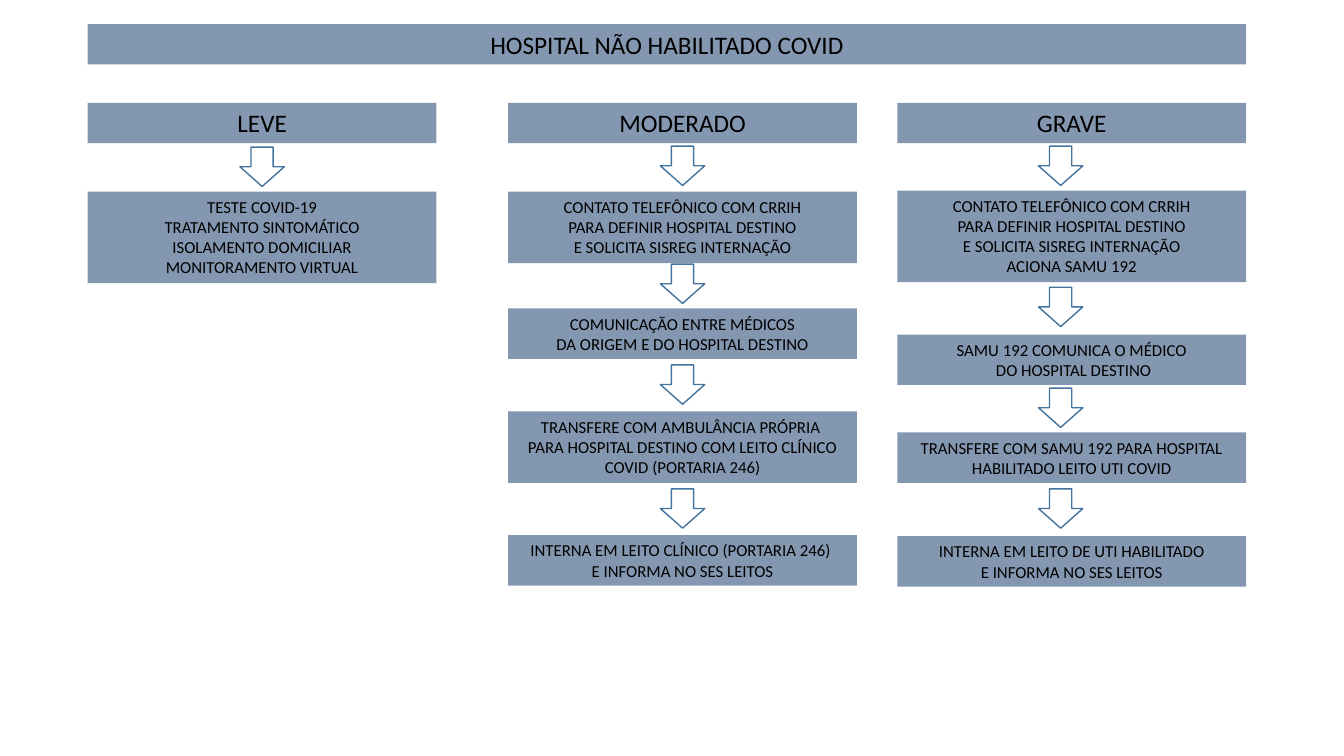
from pptx import Presentation
from pptx import util as u
from pptx.dml.color import RGBColor
from pptx.enum import shapes, text

BOX_FILL = RGBColor(0x84, 0x97, 0xB0)
ARROW_LINE = RGBColor(0x43, 0x73, 0x9E)
BLACK = RGBColor(0, 0, 0)

TITLE_HEIGHT = 0.4
BOX_HEIGHTS = {2: 0.5, 3: 0.71, 4: 0.91}  # by number of visible lines
COLUMN_WIDTH = 3.46
ARROW_WIDTH, ARROW_HEIGHT = 0.44, 0.39


def write_text(frame, content, size=12, font="Calibri", color=BLACK):
    """Write one centred paragraph per line of content."""
    for index, line in enumerate(content.split("\n")):
        paragraph = frame.paragraphs[0] if index == 0 else frame.add_paragraph()
        paragraph.alignment = text.PP_ALIGN.CENTER
        run = paragraph.add_run()
        run.text = line
        run.font.size = u.Pt(size)
        run.font.name = font
        run.font.color.rgb = color


class Flowchart:
    def __init__(self, slide):
        self.slide = slide

    def add_shape(self, kind, left, top, width, height):
        shape = self.slide.shapes.add_shape(
            kind, u.Inches(left), u.Inches(top), u.Inches(width), u.Inches(height))
        shape.shadow.inherit = False
        return shape

    def box(self, content, left, top, width, height, size=12):
        shape = self.add_shape(shapes.MSO_SHAPE.RECTANGLE, left, top, width, height)
        shape.fill.solid()
        shape.fill.fore_color.rgb = BOX_FILL
        shape.line.fill.background()
        frame = shape.text_frame
        frame.word_wrap = True
        frame.auto_size = text.MSO_AUTO_SIZE.SHAPE_TO_FIT_TEXT
        frame.vertical_anchor = text.MSO_ANCHOR.TOP
        write_text(frame, content, size=size)

    def arrow(self, left, top):
        shape = self.add_shape(
            shapes.MSO_SHAPE.DOWN_ARROW, left, top, ARROW_WIDTH, ARROW_HEIGHT)
        shape.fill.background()
        shape.line.color.rgb = ARROW_LINE
        shape.line.width = u.Pt(1)

    def column(self, heading, left, arrow_left, steps):
        self.box(heading, left, 1.02, COLUMN_WIDTH, TITLE_HEIGHT, size=18)
        for arrow_top, top, line_count, content in steps:
            self.arrow(arrow_left, arrow_top)
            self.box(content, left, top, COLUMN_WIDTH, BOX_HEIGHTS[line_count])


# Each step: top of its arrow, top of its box, visible lines, wording
MILD = [
    (1.46, 1.9, 4, "TESTE COVID-19\nTRATAMENTO SINTOMÁTICO\n"
                   "ISOLAMENTO DOMICILIAR\nMONITORAMENTO VIRTUAL"),
]
CONTACT = ("CONTATO TELEFÔNICO COM CRRIH\nPARA DEFINIR HOSPITAL DESTINO\n"
           "E SOLICITA SISREG INTERNAÇÃO")
MODERATE = [
    (1.45, 1.9, 3, CONTACT),
    (2.62, 3.06, 2, "COMUNICAÇÃO ENTRE MÉDICOS\nDA ORIGEM E DO HOSPITAL DESTINO"),
    (3.62, 4.08, 3, "TRANSFERE COM AMBULÂNCIA PRÓPRIA \n"
                    "PARA HOSPITAL DESTINO COM LEITO CLÍNICO COVID (PORTARIA 246)"),
    (4.85, 5.31, 2, "INTERNA EM LEITO CLÍNICO (PORTARIA 246) \nE INFORMA NO SES LEITOS"),
]
SEVERE = [
    (1.45, 1.89, 4, CONTACT + "\nACIONA SAMU 192"),
    (2.85, 3.32, 2, "SAMU 192 COMUNICA O MÉDICO\n DO HOSPITAL DESTINO"),
    (3.85, 4.29, 2, "TRANSFERE COM SAMU 192 PARA HOSPITAL HABILITADO LEITO UTI COVID"),
    (4.85, 5.32, 2, "INTERNA EM LEITO DE UTI HABILITADO\nE INFORMA NO SES LEITOS"),
]


def main():
    presentation = Presentation()
    presentation.slide_width = u.Inches(13.33)
    presentation.slide_height = u.Inches(7.5)
    chart = Flowchart(presentation.slides.add_slide(presentation.slide_layouts[6]))

    # Title bar
    chart.box("HOSPITAL NÃO HABILITADO COVID", 0.87, 0.24, 11.49, TITLE_HEIGHT, size=18)

    # One column per severity
    chart.column("LEVE", 0.87, 2.38, MILD)
    chart.column("MODERADO", 5.04, 6.55, MODERATE)
    chart.column("GRAVE", 8.9, 10.3, SEVERE)

    presentation.save("out.pptx")


if __name__ == "__main__":
    main()
